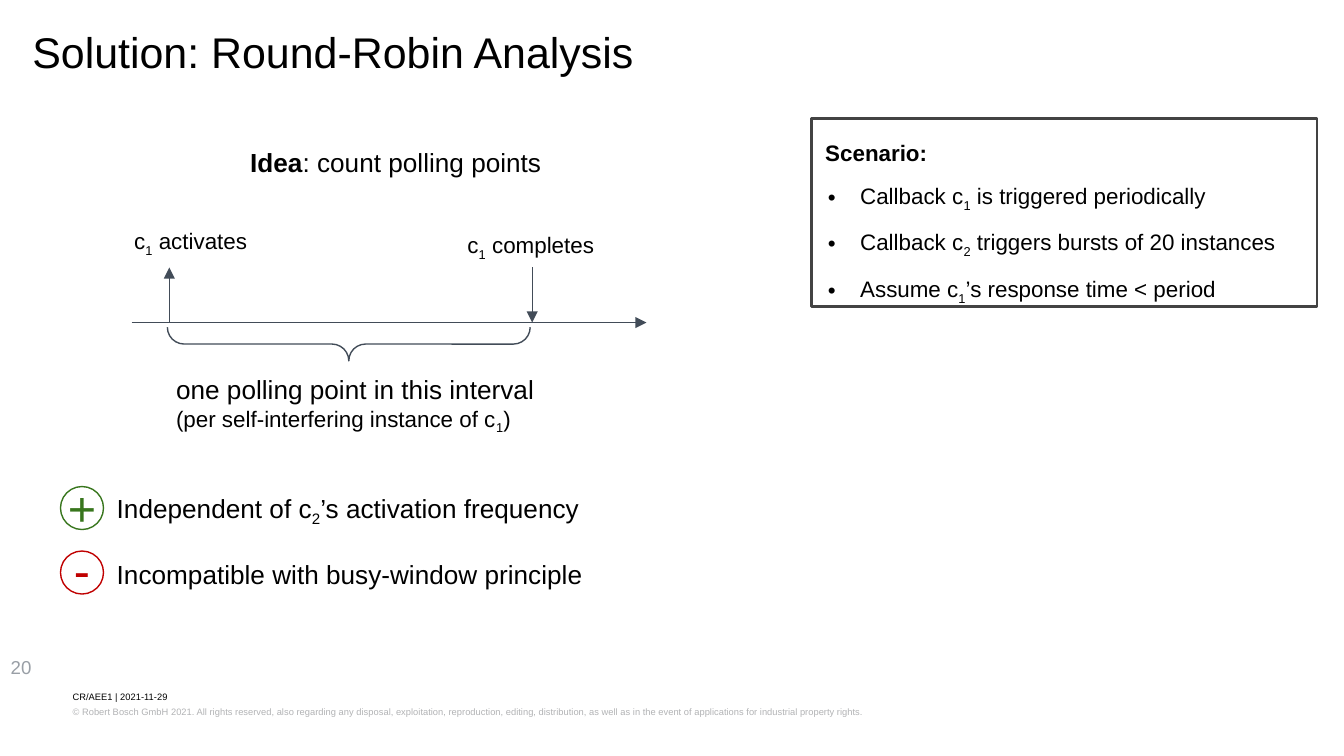
from dataclasses import dataclass, field
from typing import NamedTuple

from lxml.etree import SubElement
from pptx import Presentation
from pptx.dml.color import RGBColor as Color
from pptx.enum.shapes import MSO_CONNECTOR as Link, MSO_SHAPE as Shape
from pptx.enum.text import MSO_ANCHOR as Anchor, MSO_AUTO_SIZE as AutoSize, PP_ALIGN as Align
from pptx.oxml.ns import qn
from pptx.util import Inches, Pt


@dataclass(frozen=True)
class Theme:
    font: str = "Arial"
    ink: str = "000000"
    line: str = "424C58"
    frame: str = "434343"
    number: str = "999FA6"
    legal: str = "B2B3B5"
    plus: str = "38761D"
    minus: str = "C00000"
    title: float = 23
    body: float = 14
    label: float = 12
    sign: float = 26
    page: float = 10
    footer: float = 5
    thin: float = 0.75
    thick: float = 1.5


THEME = Theme()


class Area(NamedTuple):
    left: float
    top: float
    width: float
    height: float


class Span(NamedTuple):
    text: str
    size: float = THEME.body
    color: str = THEME.ink
    bold: bool = False
    baseline: int = 0


@dataclass
class Para:
    spans: list[Span]
    formats: dict = field(default_factory=dict)
    indent: tuple[float, float] = (0, 0)
    bullet: str = ""


class Label(NamedTuple):
    area: Area
    paras: list[Para]
    insets: tuple[float, float, float, float] = (0.1, 0.1, 0.1, 0.1)


class Arrow(NamedTuple):
    start: tuple[float, float]
    end: tuple[float, float]


class Badge(NamedTuple):
    sign: str
    color: str
    top: float
    lift: float


def apply_formats(target, formats: dict) -> None:
    for name, value in formats.items():
        setattr(target, name, value)


def place(shape, area: Area) -> None:
    apply_formats(shape, {name: Inches(value) for name, value in area._asdict().items()})


def with_index(before: str, index: str, after: str, size: float) -> list[Span]:
    return [Span(before, size), Span(index, size, baseline=-25000), Span(after, size)]


def write(shape, paras: list[Para], insets=(0, 0, 0, 0), anchor=Anchor.TOP) -> None:
    frame = shape.text_frame
    left, top, right, bottom = map(Inches, insets)
    apply_formats(frame, {
        "word_wrap": True, "auto_size": AutoSize.NONE, "vertical_anchor": anchor,
        "margin_left": left, "margin_top": top,
        "margin_right": right, "margin_bottom": bottom,
    })
    for position, item in enumerate(paras):
        para = frame.add_paragraph() if position else frame.paragraphs[0]
        margin, hanging = item.indent
        properties = para._p.get_or_add_pPr()
        properties.set("marL", str(Inches(margin)))
        properties.set("indent", str(Inches(hanging)))
        if item.bullet:
            SubElement(properties, qn("a:buFont")).set("typeface", THEME.font)
            SubElement(properties, qn("a:buChar")).set("char", item.bullet)
        else:
            SubElement(properties, qn("a:buNone"))
        apply_formats(para, {"alignment": Align.LEFT, "space_before": Pt(0)} | item.formats)
        for span in item.spans:
            run = para.add_run()
            run.text = span.text
            apply_formats(run.font, {"name": THEME.font, "size": Pt(span.size), "bold": span.bold})
            run.font.color.rgb = Color.from_string(span.color)
            if span.baseline:
                run._r.get_or_add_rPr().set("baseline", str(span.baseline))


def outline(shape, color: str, width: float) -> None:
    shape.line.color.rgb = Color.from_string(color)
    shape.line.width = Pt(width)


def add_label(page, label: Label) -> None:
    box = page.shapes.add_textbox(*map(Inches, label.area))
    write(box, label.paras, label.insets)


def add_arrow(page, arrow: Arrow) -> None:
    line = page.shapes.add_connector(Link.STRAIGHT, *map(Inches, arrow.start + arrow.end))
    outline(line, THEME.line, THEME.thin)
    SubElement(line.line._get_or_add_ln(), qn("a:tailEnd")).set("type", "triangle")
    SubElement(line._element.spPr, qn("a:effectLst"))


def add_outlined(page, kind, area: Area, color: str):
    shape = page.shapes.add_shape(kind, *map(Inches, area))
    shape.shadow.inherit = False
    shape.fill.background()
    outline(shape, color, THEME.thin)
    return shape


def add_badge(page, badge: Badge) -> None:
    circle = add_outlined(page, Shape.OVAL, Area(0.45, badge.top, 0.32, 0.32), badge.color)
    sign = Span(badge.sign, THEME.sign, badge.color)
    write(circle, [Para([sign], {"alignment": Align.CENTER})], (0, 0, 0, badge.lift), Anchor.MIDDLE)


def add_scenario(box) -> None:
    place(box, Area(6.04, 0.88, 3.76, 1.4))
    outline(box, THEME.frame, THEME.thick)
    facts = [
        ("Callback c", "1", " is triggered periodically"),
        ("Callback c", "2", " triggers bursts of 20 instances"),
        ("Assume c", "1", "’s response time < period"),
    ]
    spacing = {"line_spacing": 1.28}
    heading = Para([Span("Scenario:", THEME.label, bold=True)], spacing)
    items = [Para(with_index(*fact, THEME.label), spacing | {"space_before": Pt(4)},
                  (0.26, -0.24), "•") for fact in facts]
    write(box, [heading, *items], (0.1, 0.1, 0, 0))


def main() -> None:
    deck = Presentation()
    deck.slide_width = Inches(10)
    deck.slide_height = deck.slide_width * 9 // 16
    page = deck.slides.add_slide(deck.slide_layouts[1])
    title, scenario = page.placeholders

    place(title, Area(0.24, 0.24, 9.53, 0.35))
    write(title, [Para([Span("Solution: Round-Robin Analysis", THEME.title)], {"line_spacing": 0.89})])
    add_scenario(scenario)

    flush = (0, 0, 0, 0)
    labels = [
        Label(Area(0.54, 5.14, 8.34, 0.1),
              [Para([Span("CR/AEE1 | 2021-11-29", THEME.footer)], {"line_spacing": 1.07})], flush),
        Label(Area(0.54, 5.24, 8.34, 0.2),
              [Para([Span("© Robert Bosch GmbH 2021. All rights reserved, also regarding any disposal, "
                          "exploitation, reproduction, editing, distribution, as well as in the event "
                          "of applications for industrial property rights.",
                          THEME.footer, THEME.legal)], {"line_spacing": 1.2})], flush),
        Label(Area(0.08, 4.88, 0.26, 0.37), [Para([Span("20", THEME.page, THEME.number)])], flush),
        Label(Area(0.3, 0.99, 5.29, 0.44),
              [Para([Span("Idea", bold=True), Span(": count polling points")],
                    {"alignment": Align.CENTER})]),
        Label(Area(0.9, 1.59, 1.17, 0.4), [Para(with_index("c", "1", " activates", THEME.label))]),
        Label(Area(3.38, 1.62, 1.17, 0.4), [Para(with_index("c", "1", " completes", THEME.label))]),
        Label(Area(0.81, 2.78, 3.32, 0.44),
              [Para([Span("one polling point in this interval "),
                     *with_index("(per self-interfering instance of c", "1", ")", THEME.label)],
                    indent=(0.5, 0))], flush),
        Label(Area(0.77, 3.56, 6.93, 0.91),
              [Para(with_index("Independent of c", "2", "’s activation frequency", THEME.body)),
               Para([Span("Incompatible with busy-window principle")], {"space_before": Pt(16.5)})]),
    ]
    for label in labels:
        add_label(page, label)

    axis, peak, activation, completion = 2.4, 1.99, 1.26, 3.96
    for arrow in (
        Arrow((0.98, axis), (4.81, axis)),
        Arrow((activation, axis), (activation, peak)),
        Arrow((completion, peak), (completion, axis)),
    ):
        add_arrow(page, arrow)

    brace = add_outlined(page, Shape.RIGHT_BRACE, Area(2.47, 1.21, 0.25, 2.7), THEME.line)
    brace.rotation = 90
    brace.adjustments[0] = 0.5

    for badge in (Badge("+", THEME.plus, 3.62, 0.02), Badge("-", THEME.minus, 4.1, 0.05)):
        add_badge(page, badge)

    deck.save("out.pptx")


if __name__ == "__main__":
    main()
